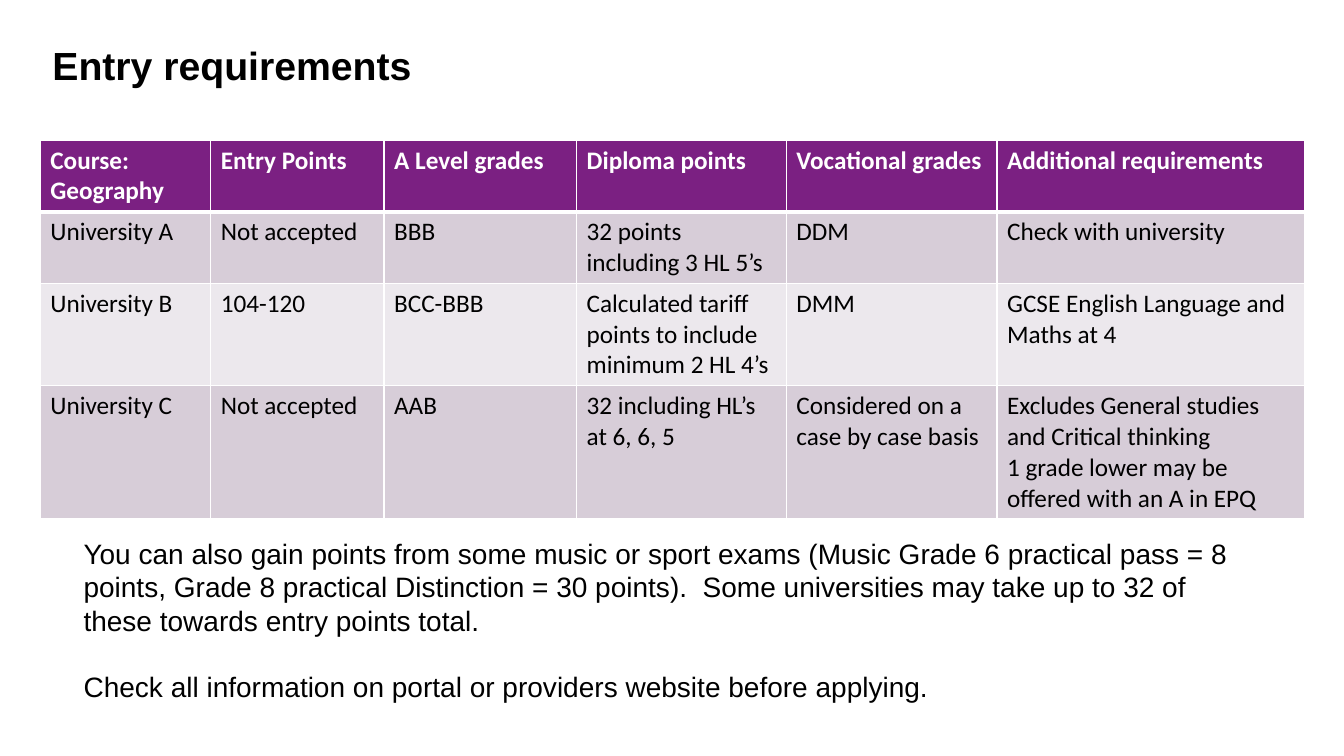
import pptx
import pptx.util
import pptx.dml.color
import pptx.enum.text
import pptx.oxml
import pptx.oxml.ns
from pptx.util import Inches

COLOURS = {
    "header": "7B2082",
    "band_dark": "D7CDD8",
    "band_light": "ECE8ED",
    "white": "FFFFFF",
    "black": "000000",
}
COLUMN_WIDTHS = [1.69, 1.72, 1.91, 2.08, 2.09, 3.05]
ROW_HEIGHTS = [0.7, 0.7, 1.0, 1.3]
ENTRY_ROWS = [
    ["Course: Geography", "Entry Points", "A Level grades", "Diploma points",
     "Vocational grades", "Additional requirements"],
    ["University A", "Not accepted", "BBB", "32 points including 3 HL 5’s",
     "DDM", "Check with university"],
    ["University B", "104-120", "BCC-BBB",
     "Calculated tariff points to include minimum 2 HL 4’s",
     "DMM", "GCSE English Language and Maths at 4"],
    ["University C", "Not accepted", "AAB", "32 including HL’s at 6, 6, 5",
     "Considered on a case by case basis",
     "Excludes General studies and Critical thinking\n"
     "1 grade lower may be offered with an A in EPQ"],
]
NOTES = [
    "You can also gain points from some music or sport exams (Music Grade 6 "
    "practical pass = 8 points, Grade 8 practical Distinction = 30 points).  "
    "Some universities may take up to 32 of these towards entry points total.",
    "Check all information on portal or providers website before applying.",
]


def colour(name):
    return pptx.dml.color.RGBColor.from_string(COLOURS[name])


def format_text(text_frame, font_name, size, colour_name, bold=False):
    for paragraph in text_frame.paragraphs:
        paragraph.alignment = pptx.enum.text.PP_ALIGN.LEFT
        for run in paragraph.runs:
            run.font.name = font_name
            run.font.size = pptx.util.Pt(size)
            run.font.bold = bold
            run.font.color.rgb = colour(colour_name)


def set_borders(cell, top, bottom):
    """Draw white cell borders; top and bottom are widths in points."""
    properties = cell._tc.get_or_add_tcPr()
    widths = {"lnL": 1, "lnR": 1, "lnT": top, "lnB": bottom}
    for position, (tag, width) in enumerate(widths.items()):
        line = pptx.oxml.parse_xml(
            f'<a:{tag} {pptx.oxml.ns.nsdecls("a")} w="{pptx.util.Pt(width)}">'
            f'<a:solidFill><a:srgbClr val="{COLOURS["white"]}"/></a:solidFill>'
            f'</a:{tag}>')
        properties.insert(position, line)


def add_title(slide):
    title = slide.shapes.title
    title.left, title.top = Inches(0.42), Inches(0.44)
    title.width, title.height = Inches(10.39), Inches(0.47)
    text_frame = title.text_frame
    text_frame.text = "Entry requirements"
    text_frame.vertical_anchor = pptx.enum.text.MSO_ANCHOR.MIDDLE
    text_frame.paragraphs[0].line_spacing = 0.9
    format_text(text_frame, "Arial", 28, "black", bold=True)


def add_entry_table(slide):
    table = slide.shapes.add_table(
        len(ENTRY_ROWS), len(COLUMN_WIDTHS), Inches(0.4), Inches(1.39),
        Inches(sum(COLUMN_WIDTHS)), Inches(sum(ROW_HEIGHTS))).table
    for column, width in zip(table.columns, COLUMN_WIDTHS):
        column.width = Inches(width)
    for row_index, texts in enumerate(ENTRY_ROWS):
        table.rows[row_index].height = Inches(ROW_HEIGHTS[row_index])
        is_header = row_index == 0
        band = "band_dark" if row_index % 2 else "band_light"
        for column_index, text in enumerate(texts):
            cell = table.cell(row_index, column_index)
            cell.text_frame.text = text
            format_text(cell.text_frame, "Calibri", 18,
                        "white" if is_header else "black", bold=is_header)
            cell.fill.solid()
            cell.fill.fore_color.rgb = colour("header" if is_header else band)
            set_borders(cell, top=3 if row_index == 1 else 1,
                        bottom=3 if is_header else 1)


def add_notes(slide):
    box = slide.shapes.add_textbox(
        Inches(0.73), Inches(5.27), Inches(11.88), Inches(1.78))
    text_frame = box.text_frame
    text_frame.word_wrap = True
    text_frame.text = "\n".join(NOTES)
    text_frame.paragraphs[1].space_before = pptx.util.Pt(23)
    format_text(text_frame, "Arial", 20, "black")


def main():
    presentation = pptx.Presentation()
    presentation.slide_width = Inches(13.33)
    presentation.slide_height = Inches(7.5)
    slide = presentation.slides.add_slide(
        presentation.slide_layouts.get_by_name("Title Only"))
    add_title(slide)
    add_entry_table(slide)
    add_notes(slide)
    presentation.save("out.pptx")


if __name__ == "__main__":
    main()
